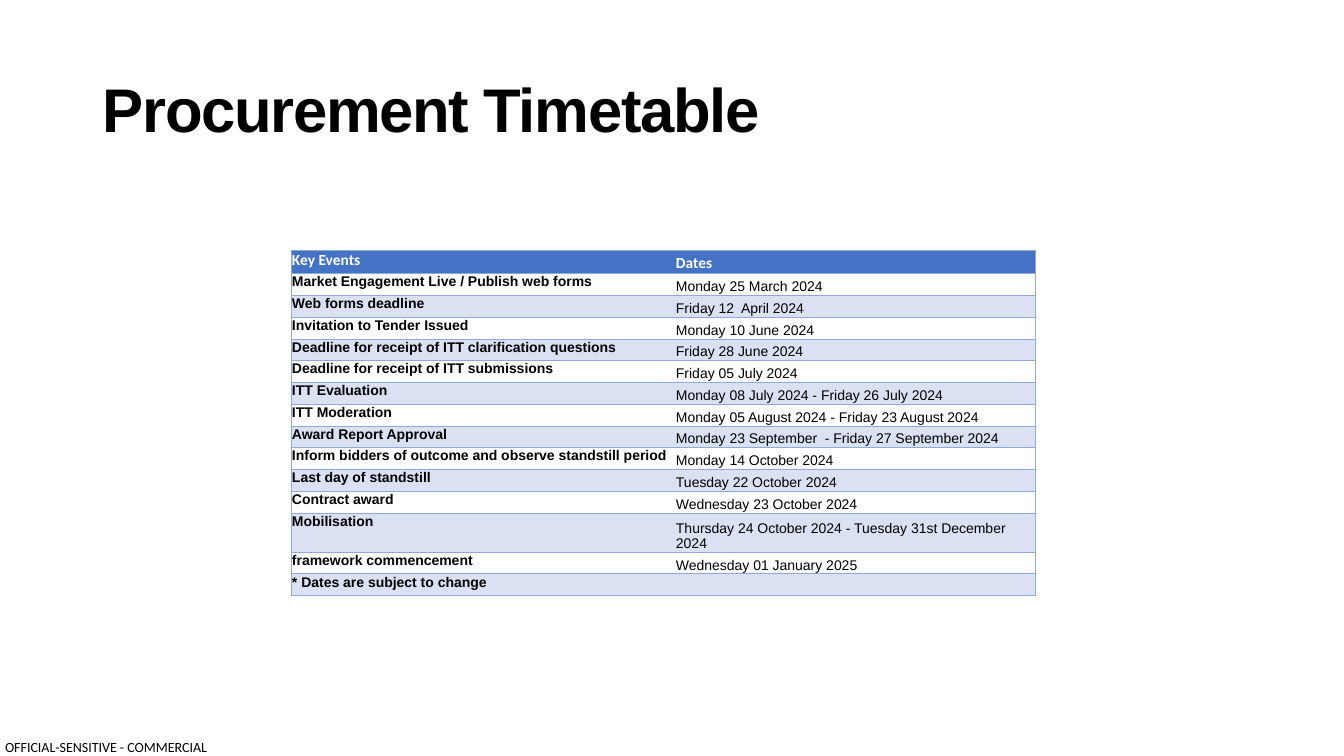
from lxml import etree
from pptx import Presentation
from pptx.dml.color import RGBColor
from pptx.enum.text import MSO_ANCHOR, PP_ALIGN
from pptx.oxml.ns import qn
from pptx.util import Pt

TOP, MIDDLE, BOTTOM = MSO_ANCHOR.TOP, MSO_ANCHOR.MIDDLE, MSO_ANCHOR.BOTTOM
LEFT = PP_ALIGN.LEFT
PLAIN_TABLE = "{2D5ABB26-0587-4C30-8999-92F81FD0307C}"
THEME = {
    "ink": "000000", "header_ink": "FFFFFF", "header": "4472C4",
    "band": "D9E1F2", "border": "8EA9DB",
    "heading": "Arial", "body": "Calibri",
    "title_size": 44, "header_size": 11, "row_size": 10, "marking_size": 10,
    "border_width": 0.5,
}


def px(length):
    return round(length * 914400 / 100.8)


def write(frame, text, *, size, font, color=THEME["ink"], bold=False,
          anchor=TOP, inset=(0, 0, 0, 0), wrap=True, line=None, tracking=None):
    frame.word_wrap = wrap
    frame.vertical_anchor = anchor
    (frame.margin_left, frame.margin_top,
     frame.margin_right, frame.margin_bottom) = map(px, inset)
    paragraph = frame.paragraphs[0]
    paragraph.alignment = LEFT
    if line:
        paragraph.line_spacing = line
    if not text:
        etree.SubElement(paragraph._p, qn("a:endParaRPr"), sz=str(size * 100))
        return
    run = paragraph.add_run()
    run.text = text
    run.font.size = Pt(size)
    run.font.name = font
    run.font.bold = bold
    run.font.color.rgb = RGBColor.from_string(color)
    if tracking:
        run._r.get_or_add_rPr().set("spc", str(tracking * 100))


deck = Presentation()
deck.slide_width, deck.slide_height = px(1344), px(756)
slide = deck.slides.add_slide(deck.slide_layouts[6])

marking = slide.shapes.add_textbox(px(5), px(739), px(206), px(17))
write(marking.text_frame, "OFFICIAL-SENSITIVE - COMMERCIAL",
      size=THEME["marking_size"], font=THEME["body"], wrap=False)

title = slide.shapes.add_textbox(px(93), px(40), px(1159), px(146))
write(title.text_frame, "Procurement Timetable", size=THEME["title_size"],
      font=THEME["heading"], bold=True, anchor=MIDDLE,
      inset=(10, 5, 10, 5), line=0.9, tracking=-1)

timetable = [
    ("Key Events", "Dates"),
    ("Market Engagement Live / Publish web forms", "Monday 25 March 2024"),
    ("Web forms deadline", "Friday 12  April 2024"),
    ("Invitation to Tender Issued", "Monday 10 June 2024"),
    ("Deadline for receipt of ITT clarification questions", "Friday 28 June 2024"),
    ("Deadline for receipt of ITT submissions", "Friday 05 July 2024"),
    ("ITT Evaluation", "Monday 08 July 2024 - Friday 26 July 2024"),
    ("ITT Moderation", "Monday 05 August 2024 - Friday 23 August 2024"),
    ("Award Report Approval", "Monday 23 September  - Friday 27 September 2024"),
    ("Inform bidders of outcome and observe standstill period", "Monday 14 October 2024"),
    ("Last day of standstill", "Tuesday 22 October 2024"),
    ("Contract award", "Wednesday 23 October 2024"),
    ("Mobilisation", "Thursday 24 October 2024 - Tuesday 31st December 2024"),
    ("framework commencement", "Wednesday 01 January 2025"),
    ("* Dates are subject to change", ""),
]
row_heights = [21 if row % 4 == 0 else 22 for row in range(len(timetable))]
row_heights[0] = 23
row_heights[12] = 39
column_widths = [384, 360]

schedule = slide.shapes.add_table(
    len(timetable), len(column_widths), px(291), px(250),
    px(sum(column_widths)), px(sum(row_heights))).table
schedule.first_row = False
schedule.horz_banding = False
schedule._tbl.tblPr.find(qn("a:tableStyleId")).text = PLAIN_TABLE
for column, width in zip(schedule.columns, column_widths):
    column.width = px(width)

for row, entry in enumerate(timetable):
    schedule.rows[row].height = px(row_heights[row])
    is_header = row == 0
    for column, text in enumerate(entry):
        cell = schedule.cell(row, column)
        write(cell.text_frame, text,
              size=THEME["header_size" if is_header else "row_size"],
              font=THEME["body" if is_header else "heading"],
              color=THEME["header_ink" if is_header else "ink"],
              bold=is_header or column == 0)
        cell.vertical_anchor = BOTTOM if column else TOP
        cell.margin_left = cell.margin_right = cell.margin_top = px(1)
        cell.margin_bottom = 0
        properties = cell._tc.get_or_add_tcPr()
        for side in ("lnR" if column else "lnL", "lnT", "lnB"):
            edge = etree.SubElement(properties, qn(f"a:{side}"),
                                    w=str(Pt(THEME["border_width"])))
            paint = etree.SubElement(edge, qn("a:solidFill"))
            etree.SubElement(paint, qn("a:srgbClr"), val=THEME["border"])
        if row % 2 and not is_header:
            cell.fill.background()
        else:
            cell.fill.solid()
            cell.fill.fore_color.rgb = RGBColor.from_string(
                THEME["header" if is_header else "band"])

deck.save("out.pptx")
